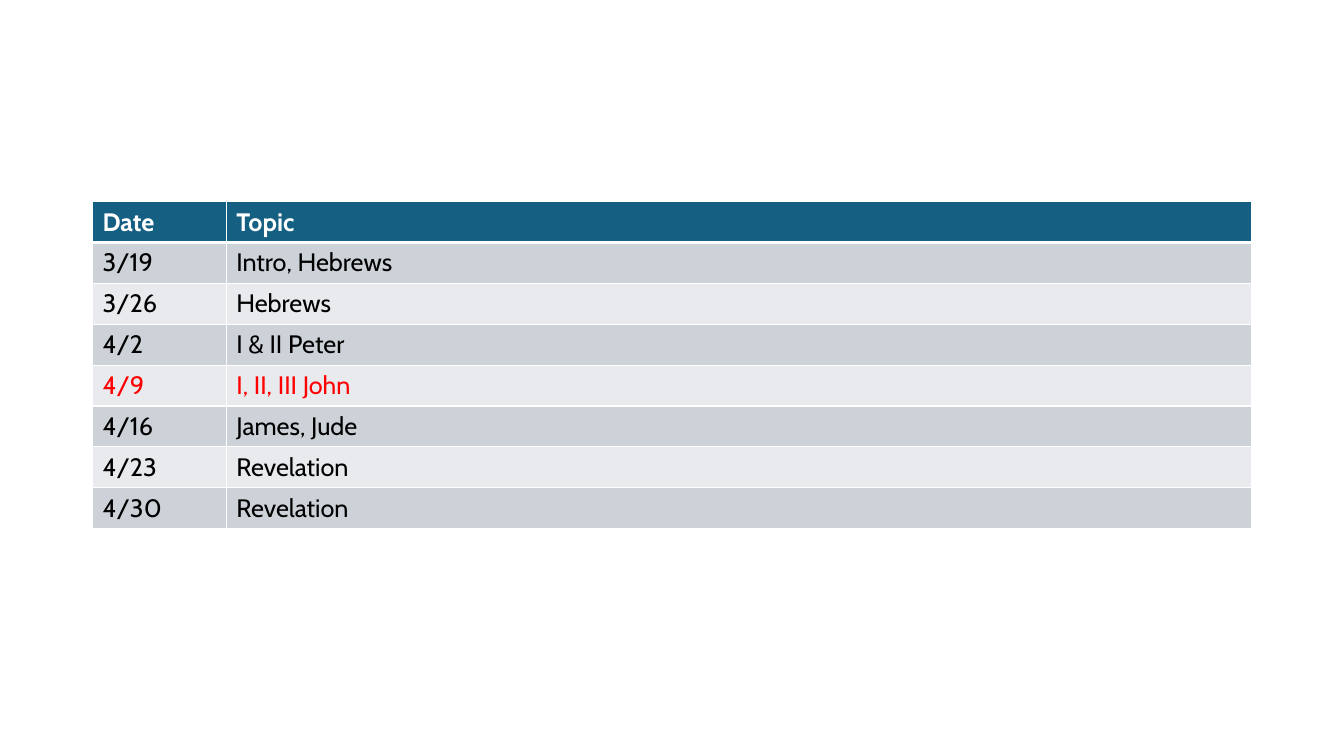
from lxml.etree import SubElement
from pptx import Presentation
from pptx.dml.color import RGBColor
from pptx.enum.text import MSO_ANCHOR
from pptx.oxml.ns import qn
from pptx.util import Cm, Pt

COLORS = {
    "header": "156082",
    "odd_row": "CCD2D8",
    "even_row": "E8EAED",
    "white": "FFFFFF",
    "black": "000000",
    "highlight": "FF0000",
}
FONT = "Cabin"
HEADINGS = ("Date", "Topic")
SESSIONS = [
    ("3/19", "Intro, Hebrews"),
    ("3/26", "Hebrews"),
    ("4/2", "I & II Peter"),
    ("4/9", "I, II, III John"),
    ("4/16", "James, Jude"),
    ("4/23", "Revelation"),
    ("4/30", "Revelation"),
]
HIGHLIGHTED_DATE = "4/9"
DATE_SHARE = 0.1155


def set_borders(cell, top, bottom):
    properties = cell._tc.get_or_add_tcPr()
    for side, points in (("lnL", 1), ("lnR", 1), ("lnT", top), ("lnB", bottom)):
        border = SubElement(properties, qn(f"a:{side}"), w=str(Pt(points)))
        border_fill = SubElement(border, qn("a:solidFill"))
        SubElement(border_fill, qn("a:srgbClr"), val=COLORS["white"])


def fill_cell(cell, text, fill, color, bold, top, bottom):
    set_borders(cell, top, bottom)
    cell.fill.solid()
    cell.fill.fore_color.rgb = RGBColor.from_string(COLORS[fill])
    cell.vertical_anchor = MSO_ANCHOR.TOP
    run = cell.text_frame.paragraphs[0].add_run()
    run.text = text
    run.font.name = FONT
    run.font.size = Pt(18)
    run.font.bold = bold
    run.font.color.rgb = RGBColor.from_string(COLORS[color])


def row_style(index, date):
    if index == 0:
        return "header", "white", True, 1, 3
    fill = "odd_row" if index % 2 else "even_row"
    color = "highlight" if date == HIGHLIGHTED_DATE else "black"
    return fill, color, False, 3 if index == 1 else 1, 1


def add_schedule(slide, left, top, width, height):
    entries = [HEADINGS, *SESSIONS]
    schedule = slide.shapes.add_table(
        len(entries), len(HEADINGS), left, top, width, height
    ).table
    date_width = int(width * DATE_SHARE)
    schedule.columns[0].width = date_width
    schedule.columns[1].width = width - date_width
    for index, entry in enumerate(entries):
        style = row_style(index, entry[0])
        for column, text in enumerate(entry):
            fill_cell(schedule.cell(index, column), text, *style)


def main():
    presentation = Presentation()
    presentation.slide_width = Cm(33.87)
    presentation.slide_height = Cm(19.05)
    slide = presentation.slides.add_slide(presentation.slide_layouts[6])
    add_schedule(slide, Cm(2.33), Cm(5.08), Cm(29.21), Cm(8.24))
    presentation.save("out.pptx")


if __name__ == "__main__":
    main()
